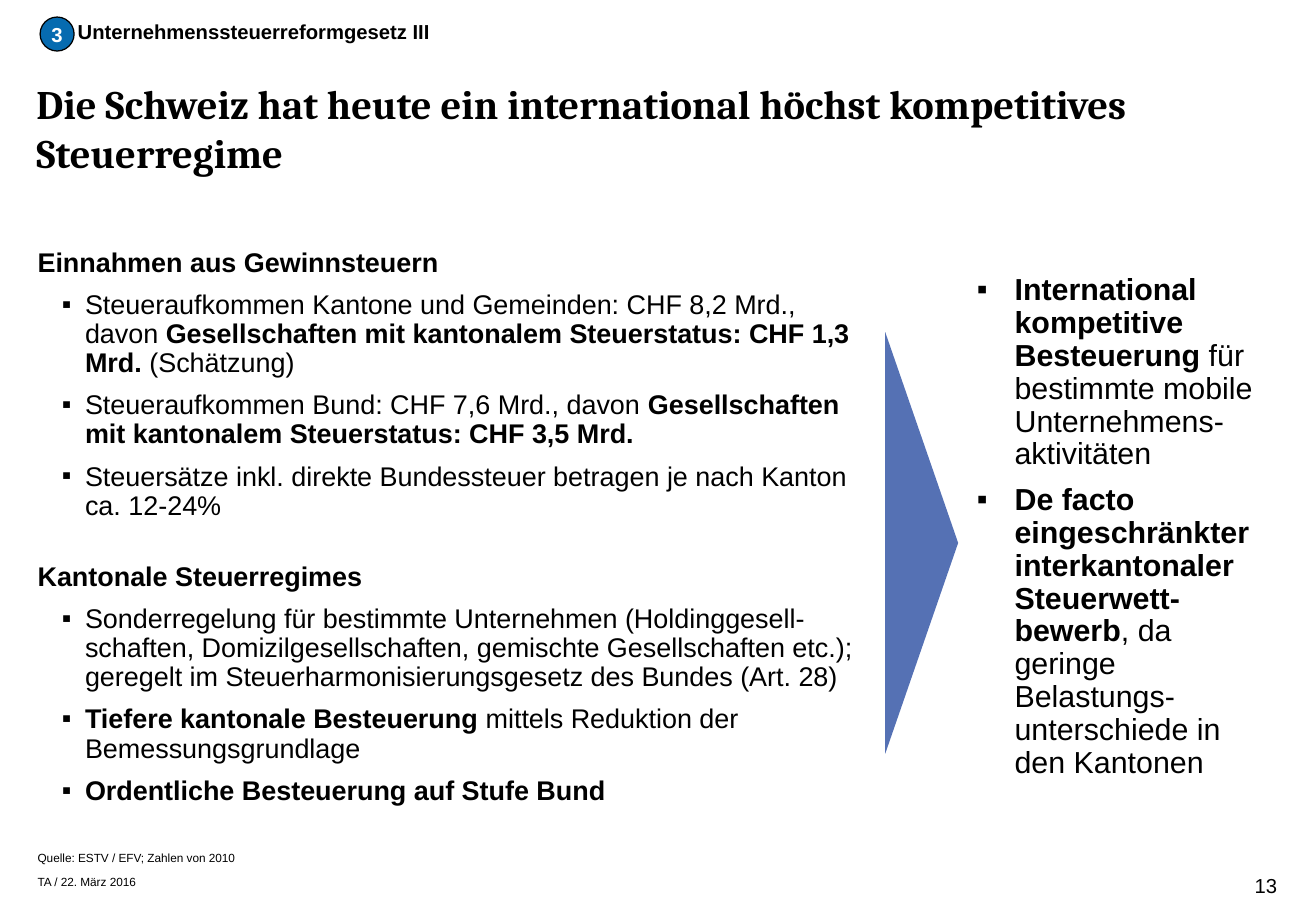
from lxml.etree import SubElement
from pptx import Presentation
from pptx.dml.color import RGBColor
from pptx.enum.shapes import MSO_SHAPE as Preset
from pptx.enum.text import MSO_ANCHOR as Anchor, PP_ALIGN as Align
from pptx.oxml.ns import qn
from pptx.util import Inches, Pt

BLACK = RGBColor(0, 0, 0)
WHITE = RGBColor(255, 255, 255)
BADGE_BLUE = RGBColor(0x06, 0x6B, 0xB0)
ARROW_BLUE = RGBColor(0x55, 0x71, 0xB4)

WIDTH, HEIGHT = 10.83, 7.5
MARGIN = 0.31
BODY_TOP, BODY_HEIGHT = 2.05, 4.58
BODY_SPACING = 0.9
BULLET_SPACE, SECTION_SPACE = Pt(7.7), Pt(25)

presentation = Presentation()
presentation.slide_width = Inches(WIDTH)
presentation.slide_height = Inches(HEIGHT)
slide = presentation.slides.add_slide(presentation.slide_layouts[6])


def fill_frame(shape, paragraphs, size, name="Arial", color=BLACK, align=Align.LEFT,
               anchor=Anchor.TOP, wrap=True, spacing=None):
    """Write paragraphs given as (bullet indent, space before, [(text, bold), ...])."""
    frame = shape.text_frame
    frame.margin_left = frame.margin_right = frame.margin_top = frame.margin_bottom = 0
    frame.word_wrap = wrap
    frame.vertical_anchor = anchor
    for index, (indent, space, runs) in enumerate(paragraphs):
        paragraph = frame.paragraphs[0] if index == 0 else frame.add_paragraph()
        paragraph.alignment = align
        if indent:
            left, hanging = indent
            properties = paragraph._p.get_or_add_pPr()
            properties.set("marL", str(Inches(left)))
            properties.set("indent", str(-Inches(hanging)))
            SubElement(properties, qn("a:buFont"), typeface="Arial")
            SubElement(properties, qn("a:buChar"), char="▪")
        if spacing:
            paragraph.line_spacing = spacing
        if index:
            paragraph.space_before = space
        font = paragraph.font
        font.name, font.size, font.color.rgb = name, Pt(size), color
        for text, bold in runs:
            run = paragraph.add_run()
            run.text = text
            run.font.bold = bold


def add_text(left, top, width, height, paragraphs, size, **options):
    box = slide.shapes.add_textbox(Inches(left), Inches(top), Inches(width), Inches(height))
    fill_frame(box, paragraphs, size, **options)


# Chapter marker
badge = slide.shapes.add_shape(Preset.OVAL, Inches(0.33), Inches(0.14), Inches(0.28), Inches(0.28))
badge.shadow.inherit = False
badge.fill.solid()
badge.fill.fore_color.rgb = BADGE_BLUE
badge.line.color.rgb = BLACK
badge.line.width = Pt(0.75)
fill_frame(badge, [(None, 0, [("3", True)])], 12, color=WHITE,
           align=Align.CENTER, anchor=Anchor.MIDDLE)
add_text(0.64, 0.16, 2.97, 0.2, [(None, 0, [("Unternehmenssteuerreformgesetz III", True)])],
         12, wrap=False)

# Title
title = "Die Schweiz hat heute ein international höchst kompetitives Steuerregime"
add_text(0.3, 0.65, WIDTH - 0.3, 0.78, [(None, 0, [(title, True)])], 24, name="Cambria")

# Facts on the left: headings with bullets below
sections = [
    ("Einnahmen aus Gewinnsteuern", [
        [("Steueraufkommen Kantone und Gemeinden: CHF 8,2 Mrd., davon ", False),
         ("Gesellschaften mit kantonalem Steuerstatus: CHF 1,3 Mrd. ", True),
         ("(Schätzung)", False)],
        [("Steueraufkommen Bund: CHF 7,6 Mrd., davon ", False),
         ("Gesellschaften mit kantonalem Steuerstatus: CHF 3,5 Mrd.", True)],
        [("Steuersätze inkl. direkte Bundessteuer betragen je nach Kanton ca. 12-24%", False)],
    ]),
    ("Kantonale Steuerregimes", [
        [("Sonderregelung für bestimmte Unternehmen (Holdinggesell-schaften, "
          "Domizilgesellschaften, gemischte Gesellschaften etc.); geregelt im "
          "Steuerharmonisierungsgesetz des Bundes (Art. 28)", False)],
        [("Tiefere kantonale Besteuerung ", True),
         ("mittels Reduktion der Bemessungsgrundlage", False)],
        [("Ordentliche Besteuerung auf Stufe Bund", True)],
    ]),
]
facts = []
for heading, bullets in sections:
    facts.append((None, SECTION_SPACE, [(heading, True)]))
    facts += [((0.39, 0.19), BULLET_SPACE, runs) for runs in bullets]
add_text(MARGIN, BODY_TOP, 6.76, BODY_HEIGHT, facts, 16, spacing=BODY_SPACING)

# Arrow from facts to conclusions: a triangle turned to the right
arrow_length, arrow_depth, arrow_center = 3.47, 0.6, 7.585
arrow = slide.shapes.add_shape(
    Preset.ISOSCELES_TRIANGLE, Inches(arrow_center - arrow_length / 2), Inches(4.17),
    Inches(arrow_length), Inches(arrow_depth))
arrow.rotation = 90
arrow.shadow.inherit = False
arrow.fill.solid()
arrow.fill.fore_color.rgb = ARROW_BLUE
arrow.line.fill.background()

# Conclusions on the right
conclusions = [
    [("International kompetitive Besteuerung ", True),
     ("für bestimmte mobile Unternehmens-aktivitäten", False)],
    [("De facto eingeschränkter interkantonaler Steuerwett-bewerb", True),
     (", da geringe Belastungs-unterschiede in den Kantonen", False)],
]
add_text(8.04, BODY_TOP, 2.27, BODY_HEIGHT,
         [((0.31, 0.31), BULLET_SPACE, runs) for runs in conclusions],
         18, anchor=Anchor.MIDDLE, spacing=BODY_SPACING)

# Source, date and page number
add_text(MARGIN, 7.0, 3.42, 0.12, [(None, 0, [("Quelle: ESTV / EFV; Zahlen von 2010", False)])], 7)
add_text(MARGIN, 7.2, 0.84, 0.12, [(None, 0, [("TA / 22. März 2016", False)])], 7, wrap=False)
add_text(9.92, 7.19, 0.59, 0.2, [(None, 0, [("13", False)])], 12, align=Align.RIGHT)

presentation.save("out.pptx")
